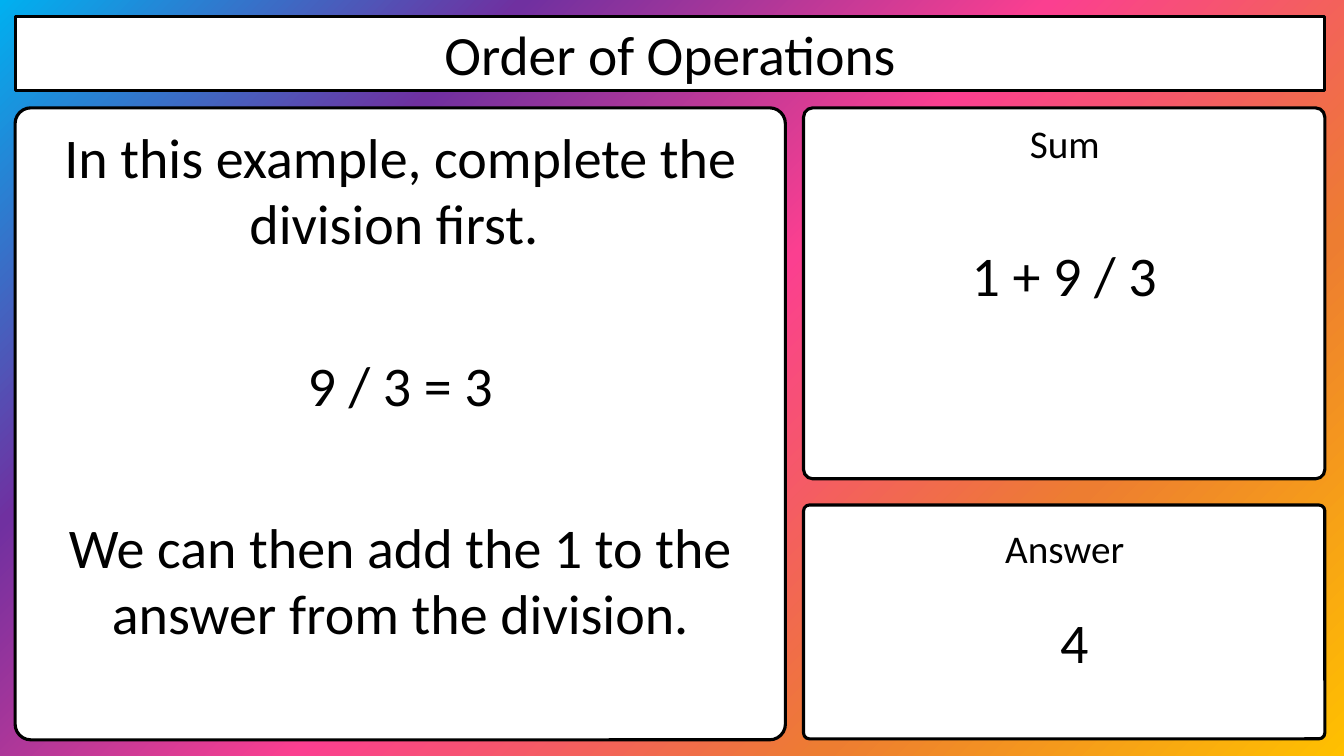
from dataclasses import dataclass

from pptx import Presentation
from pptx.dml.color import RGBColor
from pptx.enum.shapes import MSO_SHAPE
from pptx.enum.text import MSO_ANCHOR, PP_ALIGN
from pptx.oxml import parse_xml
from pptx.oxml.ns import nsdecls
from pptx.shapes.autoshape import Shape
from pptx.slide import Slide
from pptx.util import Inches, Pt

ROUNDED = MSO_SHAPE.ROUNDED_RECTANGLE
CENTER = PP_ALIGN.CENTER
TOP, MIDDLE = MSO_ANCHOR.TOP, MSO_ANCHOR.MIDDLE

WHITE = RGBColor(0xFF, 0xFF, 0xFF)
BLACK = RGBColor(0, 0, 0)
RAINBOW = [
    RGBColor(0xFF, 0xC0, 0x00),
    RGBColor(0xED, 0x7D, 0x31),
    RGBColor(0xFB, 0x3F, 0x90),
    RGBColor(0x70, 0x30, 0xA0),
    RGBColor(0x00, 0xB0, 0xF0),
]
FONT = "Calibri"
CORNER = 0.025
STEP_GAP = 69


@dataclass
class Box:
    left: float
    top: float
    width: float
    height: float

    def emu(self) -> tuple[int, int, int, int]:
        return (Inches(self.left), Inches(self.top),
                Inches(self.width), Inches(self.height))


@dataclass
class Label:
    text: str
    box: Box
    size: float


TITLE_BOX = Box(0.15, 0.16, 12.99, 0.74)
STEPS_PANEL = Box(0.15, 1.07, 7.64, 6.27)
SUM_PANEL = Box(7.97, 1.07, 5.17, 3.68)
ANSWER_PANEL = Box(7.97, 5.01, 5.17, 2.32)

STEPS = [
    "In this example, complete the division first. ",
    "9 / 3 = 3",
    "We can then add the 1 to the answer from the division.",
]
LABELS = [
    Label("Sum", Box(9.43, 1.13, 2.26, 0.57), 28),
    Label("Answer", Box(9.43, 5.15, 2.26, 0.57), 28),
    Label("1 + 9 / 3", Box(8.83, 2.34, 3.45, 0.77), 40),
    Label("4", Box(8.93, 5.98, 3.45, 0.77), 40),
]


def set_background(s: Slide) -> None:
    """Fill the slide with a circular gradient centred on the bottom right corner."""
    last = len(RAINBOW) - 1
    stops = "".join(
        f'<a:gs pos="{i * 100000 // last}"><a:srgbClr val="{color}"/></a:gs>'
        for i, color in enumerate(RAINBOW)
    )
    bg = parse_xml(
        f'<p:bg {nsdecls("p", "a")}><p:bgPr><a:gradFill><a:gsLst>{stops}</a:gsLst>'
        '<a:path path="circle"><a:fillToRect l="100000" t="100000"/></a:path>'
        '</a:gradFill><a:effectLst/></p:bgPr></p:bg>'
    )
    s.element.cSld.insert(0, bg)


def outline(sp: Shape) -> None:
    sp.fill.solid()
    sp.fill.fore_color.rgb = WHITE
    sp.line.color.rgb = BLACK
    sp.line.width = Pt(2.25)


def add_panel(s: Slide, box: Box) -> Shape:
    sp = s.shapes.add_shape(ROUNDED, *box.emu())
    sp.adjustments[0] = CORNER
    sp.shadow.inherit = False
    outline(sp)
    return sp


def write(sp: Shape, lines: list[str], size: float, gap: float = 0,
          spacing: float = 1.0) -> None:
    """Write centred paragraphs with the given gap in points between them."""
    tf = sp.text_frame
    tf.word_wrap = True
    for i, line in enumerate(lines):
        p = tf.add_paragraph() if i else tf.paragraphs[0]
        p.alignment = CENTER
        p.line_spacing = spacing
        p.space_before = Pt(gap if i else 0)
        r = p.add_run()
        r.text = line
        r.font.name = FONT
        r.font.size = Pt(size)
        r.font.color.rgb = BLACK


def add_title(s: Slide, text: str) -> None:
    title = s.shapes.title
    title.left, title.top, title.width, title.height = TITLE_BOX.emu()
    outline(title)
    title.text_frame.vertical_anchor = MIDDLE
    write(title, [text], 39.6)


def add_steps(s: Slide) -> None:
    panel = add_panel(s, STEPS_PANEL)
    panel.text_frame.vertical_anchor = TOP
    panel.text_frame.margin_top = Inches(0.13)
    write(panel, STEPS, 40, STEP_GAP, 0.98)


def main() -> None:
    prs = Presentation()
    prs.slide_width, prs.slide_height = Inches(13.33), Inches(7.5)
    s = prs.slides.add_slide(prs.slide_layouts.get_by_name("Title Only"))
    set_background(s)
    add_title(s, "Order of Operations")
    add_steps(s)
    for box in (SUM_PANEL, ANSWER_PANEL):
        add_panel(s, box)
    for label in LABELS:
        write(s.shapes.add_textbox(*label.box.emu()), [label.text], label.size)
    prs.save("out.pptx")


if __name__ == "__main__":
    main()
